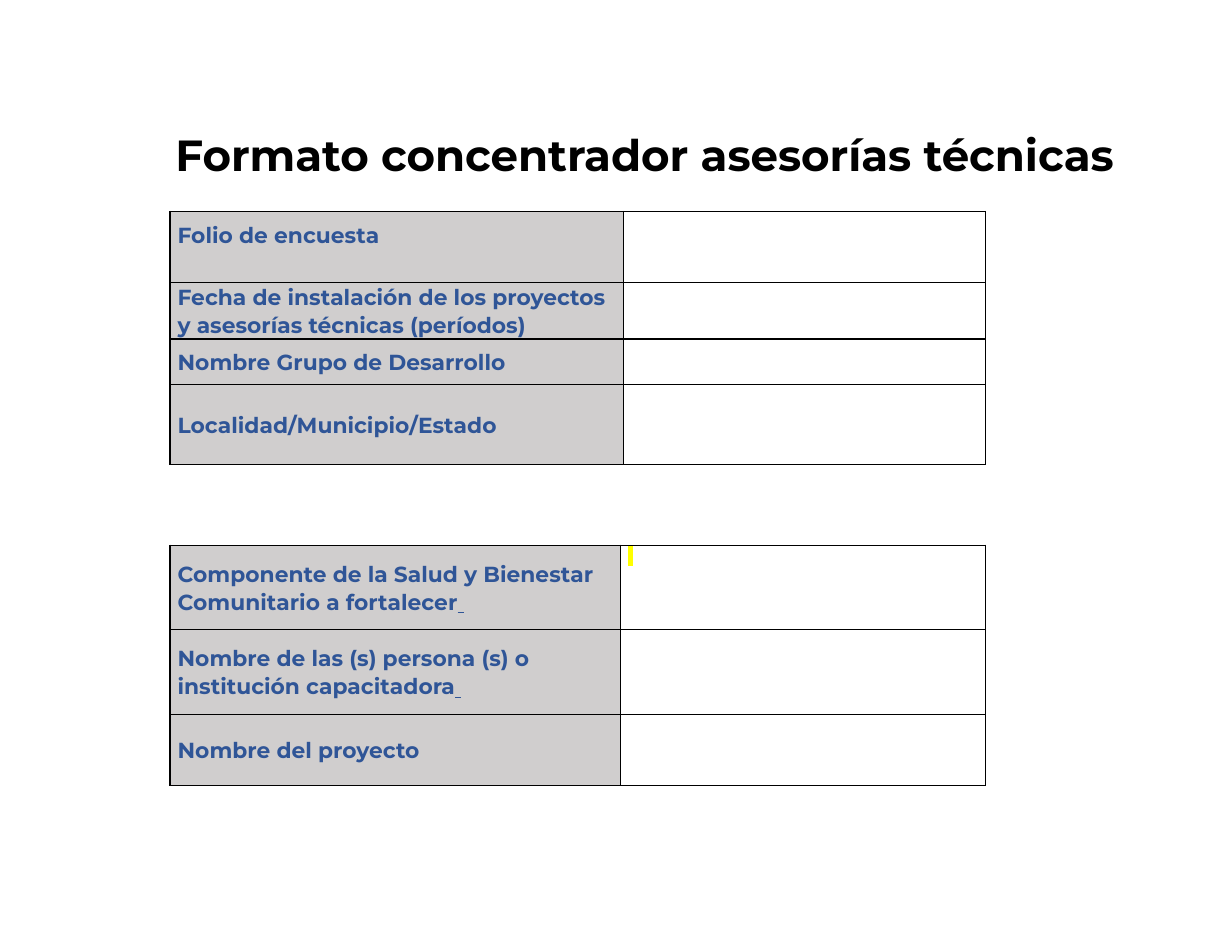
from lxml import etree
from pptx import Presentation
from pptx.dml.color import RGBColor
from pptx.enum import text
from pptx.oxml.ns import qn
from pptx.util import Pt

FONT = "Montserrat"
COLORS = {"title": "000000", "label": "2F5597", "label_fill": "D0CECE",
          "answer_fill": "FFFFFF", "border": "000000", "highlight": "FFFF00"}


def rgb(name):
    return RGBColor.from_string(COLORS[name])


def add_run(p, words, size, color, bold=True, underline=None):
    r = p.add_run()
    r.text = words
    r.font.size, r.font.bold, r.font.underline = Pt(size), bold, underline
    r.font.name = FONT
    r.font.color.rgb = rgb(color)
    return r


def highlight(r):
    mark = etree.Element(qn("a:highlight"))
    etree.SubElement(mark, qn("a:srgbClr"), val=COLORS["highlight"])
    r.font.fill._xPr.find(qn("a:solidFill")).addnext(mark)


def style_cell(cell, fill):
    cell.fill.solid()
    cell.fill.fore_color.rgb = rgb(fill)
    cell.vertical_anchor = text.MSO_ANCHOR.MIDDLE
    cell.margin_left = cell.margin_right = Pt(5)
    cell.margin_top = cell.margin_bottom = 0
    cell.text_frame.paragraphs[0].font.size = Pt(14)
    # Borders come before the fill in the cell properties
    tc_pr = cell._tc.get_or_add_tcPr()
    for i, side in enumerate(("lnL", "lnR", "lnT", "lnB")):
        ln = etree.Element(qn(f"a:{side}"), w=str(Pt(1)))
        solid = etree.SubElement(ln, qn("a:solidFill"))
        etree.SubElement(solid, qn("a:srgbClr"), val=COLORS["border"])
        tc_pr.insert(i, ln)


def add_title(s, box, words):
    tf = s.shapes.add_textbox(*map(Pt, box)).text_frame
    tf.word_wrap = True
    tf.vertical_anchor = text.MSO_ANCHOR.MIDDLE
    p = tf.paragraphs[0]
    p.alignment = text.PP_ALIGN.CENTER
    p.line_spacing = 0.9
    add_run(p, words, 28, "title")


def add_form(s, box, label_width, rows):
    """Rows are (height, label, underlined tail); answers stay empty."""
    left, top, width = box
    height = sum(row[0] for row in rows)
    table = s.shapes.add_table(len(rows), 2, Pt(left), Pt(top),
                               Pt(width), Pt(height)).table
    table.first_row = table.horz_banding = False
    table.columns[0].width = Pt(label_width)
    table.columns[1].width = Pt(width - label_width)
    for i, (row_height, label, tail) in enumerate(rows):
        table.rows[i].height = Pt(row_height)
        style_cell(table.cell(i, 0), "label_fill")
        style_cell(table.cell(i, 1), "answer_fill")
        p = table.cell(i, 0).text_frame.paragraphs[0]
        p.line_spacing = 1.07
        add_run(p, label, 14, "label")
        if tail:
            add_run(p, tail, 14, "label", underline=True)
    return table


def main():
    prs = Presentation()
    prs.slide_width, prs.slide_height = Pt(792), Pt(612)
    s = prs.slides.add_slide(prs.slide_layouts[6])

    add_title(s, (32.4, 80, 764, 42.5), "Formato concentrador asesorías técnicas")

    # Survey and group details
    survey = add_form(s, (109.2, 136, 524.4), 291.6, [
        (45.5, "Folio de encuesta", ""),
        (36.5, "Fecha de instalación de los proyectos y asesorías técnicas (períodos)", ""),
        (29, "Nombre Grupo de Desarrollo", ""),
        (51.6, "Localidad/Municipio/Estado", "")])
    survey.cell(0, 0).margin_bottom = Pt(16)

    # Project details, with a highlighted mark in the first answer
    project = add_form(s, (109.2, 350.6, 524.4), 289.6, [
        (54.3, "Componente de la Salud y Bienestar Comunitario a fortalecer", " "),
        (54.3, "Nombre de las (s) persona (s) o institución capacitadora", " "),
        (46, "Nombre del proyecto", "")])
    answer = project.cell(0, 1)
    answer.vertical_anchor = text.MSO_ANCHOR.TOP
    highlight(add_run(answer.text_frame.paragraphs[0], " ", 11, "label"))

    prs.save("out.pptx")


if __name__ == "__main__":
    main()
